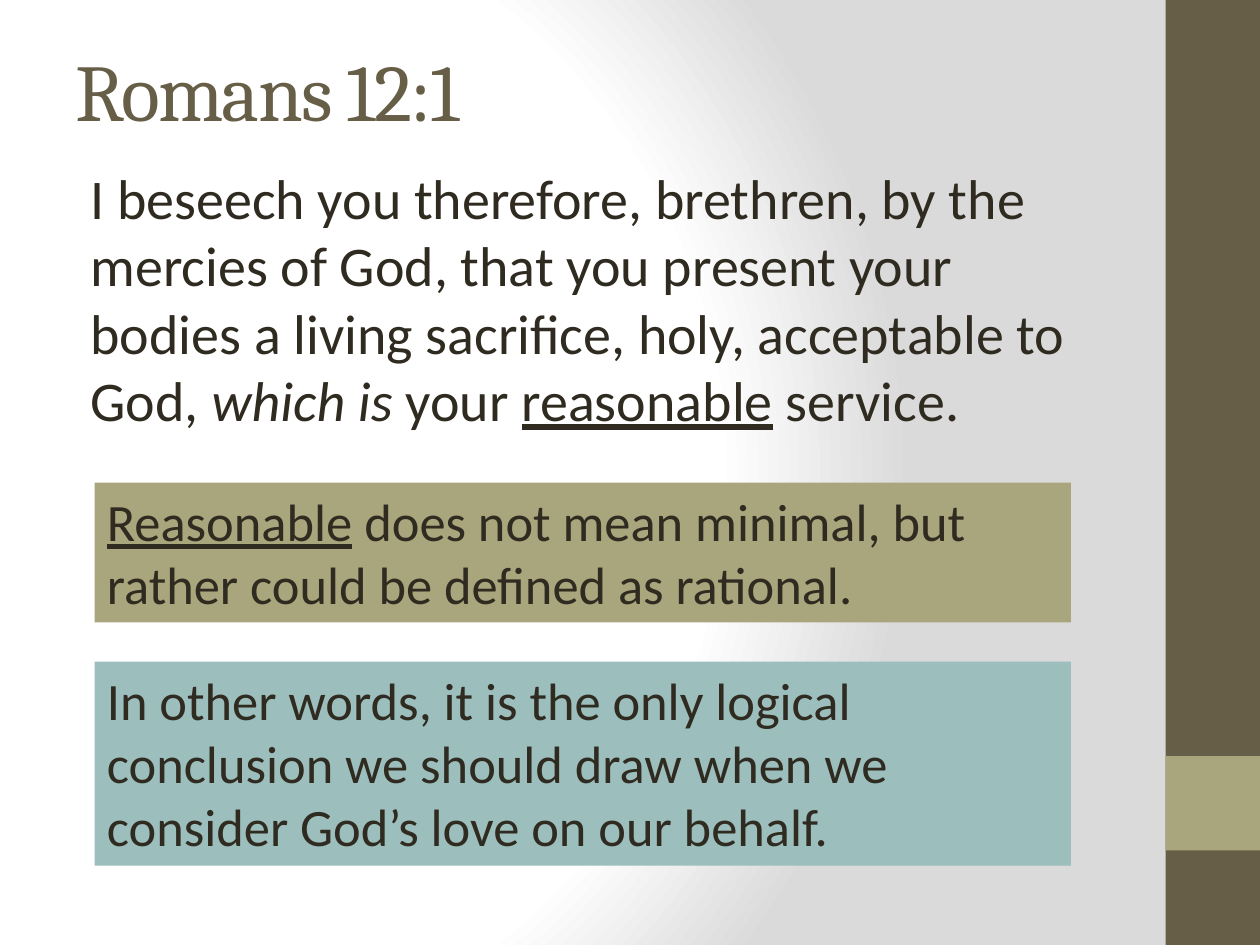
"""Build the Romans 12:1 slide with its verse, two notes and a side band."""
import lxml.etree
import pptx
import pptx.dml.color
import pptx.enum.shapes
import pptx.enum.text
import pptx.oxml.ns
import pptx.util

RGB = pptx.dml.color.RGBColor
BROWN = RGB(0x67, 0x5E, 0x47)
OLIVE = RGB(0xA9, 0xA5, 0x7C)
TEAL = RGB(0x9C, 0xBE, 0xBD)
INK = RGB(0x2F, 0x2B, 0x20)
WHITE = RGB(0xFF, 0xFF, 0xFF)
GREY = RGB(0xDA, 0xDA, 0xDA)

WIDE, HIGH = 10, 7.5
BAND = 0.75
EDGE = WIDE - BAND
LEFT, SPAN = 0.5, 8.33
NOTE_LEFT, NOTE_SPAN = 0.75, 7.75

TITLE = [("Romans 12:1", "")]
VERSE = [
    ("I beseech you therefore, brethren, by the mercies of God, that you "
     "present your bodies a living sacrifice, holy, acceptable to God, ", ""),
    ("which is", "i"),
    (" your ", ""),
    ("reasonable", "u"),
    (" service.", ""),
]
NOTES = [
    (3.83, 1.11, OLIVE, [
        ("Reasonable", "u"),
        (" does not mean minimal, but rather could be defined as rational.", ""),
    ]),
    (5.25, 1.62, TEAL, [
        ("In other words, it is the only logical conclusion we should draw "
         "when we consider God’s love on our behalf.", ""),
    ]),
]
BARS = [(0, HIGH, BROWN), (HIGH * 0.8, BAND, OLIVE)]
STOPS = [(0, WHITE), (75, WHITE), (100, GREY)]
FOCUS = {"l": 20, "t": 50, "r": 100, "b": 50}


def shade(slide):
    slide.background.fill.gradient()
    qn = pptx.oxml.ns.qn
    grad = next(slide.element.iter(qn("a:gradFill")))
    for child in list(grad):
        grad.remove(child)
    stops = lxml.etree.SubElement(grad, qn("a:gsLst"))
    for place, tint in STOPS:
        stop = lxml.etree.SubElement(stops, qn("a:gs"), pos=str(place * 1000))
        lxml.etree.SubElement(stop, qn("a:srgbClr"), val=str(tint))
    round_fill = lxml.etree.SubElement(grad, qn("a:path"), path="circle")
    sides = {side: str(share * 1000) for side, share in FOCUS.items()}
    lxml.etree.SubElement(round_fill, qn("a:fillToRect"), sides)


def block(slide, box, tint):
    shape = slide.shapes.add_shape(
        pptx.enum.shapes.MSO_SHAPE.RECTANGLE, *map(pptx.util.Inches, box))
    shape.shadow.inherit = False
    shape.fill.solid()
    shape.fill.fore_color.rgb = tint
    shape.line.fill.background()
    return shape


def write(shape, runs, size, face="Calibri", tint=INK, middle=False):
    frame = shape.text_frame
    frame.word_wrap = True
    anchor = pptx.enum.text.MSO_ANCHOR
    frame.vertical_anchor = anchor.MIDDLE if middle else anchor.TOP
    para = frame.paragraphs[0]
    para.alignment = pptx.enum.text.PP_ALIGN.LEFT
    for text, style in runs:
        run = para.add_run()
        run.text = text
        font = run.font
        font.name, font.size = face, pptx.util.Pt(size)
        font.color.rgb = tint
        font.italic = style == "i"
        font.underline = style == "u"
    return para


def label(slide, top, tall):
    box = (LEFT, top, SPAN, tall)
    return slide.shapes.add_textbox(*map(pptx.util.Inches, box))


def main():
    deck = pptx.Presentation()
    deck.slide_width = pptx.util.Inches(WIDE)
    deck.slide_height = pptx.util.Inches(HIGH)
    slide = deck.slides.add_slide(deck.slide_layouts[6])
    shade(slide)
    for top, tall, tint in BARS:
        block(slide, (EDGE, top, BAND, tall), tint)

    title = write(label(slide, 0.08, 1.25), TITLE, 46, "Cambria", BROWN, True)
    title.runs[0].font._element.set("spc", "-100")
    verse = write(label(slide, 1.25, 2.58), VERSE, 32)
    verse._p.get_or_add_pPr().set("marL", str(pptx.util.Inches(0.12)))

    for top, tall, tint, runs in NOTES:
        note = block(slide, (NOTE_LEFT, top, NOTE_SPAN, tall), tint)
        write(note, runs, 30)
        note.text_frame.auto_size = pptx.enum.text.MSO_AUTO_SIZE.SHAPE_TO_FIT_TEXT
    deck.save("out.pptx")


if __name__ == "__main__":
    main()
